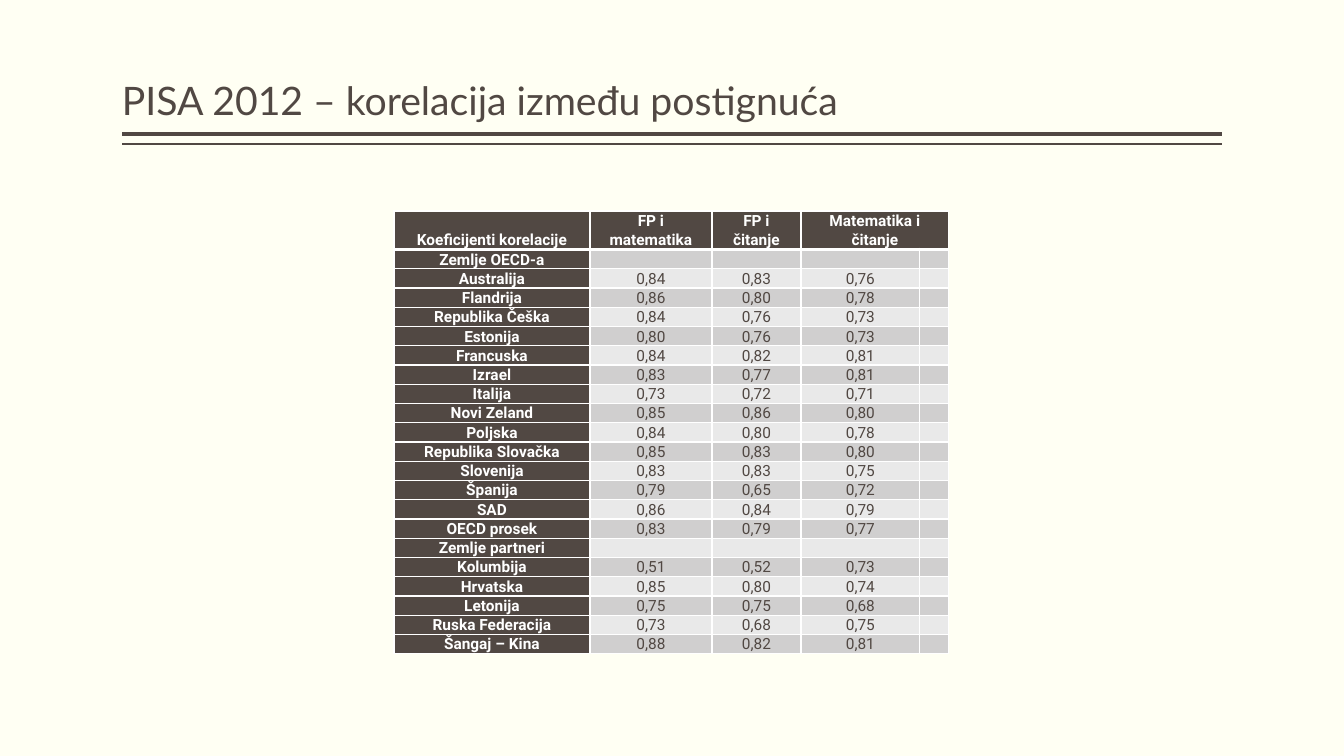
from lxml.etree import SubElement
from pptx import Presentation
from pptx.dml.color import RGBColor
from pptx.enum.shapes import MSO_CONNECTOR
from pptx.enum.text import MSO_ANCHOR, MSO_AUTO_SIZE, PP_ALIGN
from pptx.oxml.ns import qn
from pptx.util import Pt

TITLE = "PISA 2012 – korelacija između postignuća"
HEADER = ("Koeficijenti korelacije", "FP i matematika", "FP i čitanje", "Matematika i čitanje")
COUNTRIES = [
    ("Zemlje OECD-a",),
    ("Australija", "0,84", "0,83", "0,76"),
    ("Flandrija", "0,86", "0,80", "0,78"),
    ("Republika Češka", "0,84", "0,76", "0,73"),
    ("Estonija", "0,80", "0,76", "0,73"),
    ("Francuska", "0,84", "0,82", "0,81"),
    ("Izrael", "0,83", "0,77", "0,81"),
    ("Italija", "0,73", "0,72", "0,71"),
    ("Novi Zeland", "0,85", "0,86", "0,80"),
    ("Poljska", "0,84", "0,80", "0,78"),
    ("Republika Slovačka", "0,85", "0,83", "0,80"),
    ("Slovenija", "0,83", "0,83", "0,75"),
    ("Španija", "0,79", "0,65", "0,72"),
    ("SAD", "0,86", "0,84", "0,79"),
    ("OECD prosek", "0,83", "0,79", "0,77"),
    ("Zemlje partneri",),
    ("Kolumbija", "0,51", "0,52", "0,73"),
    ("Hrvatska", "0,85", "0,80", "0,74"),
    ("Letonija", "0,75", "0,75", "0,68"),
    ("Ruska Federacija", "0,73", "0,68", "0,75"),
    ("Šangaj – Kina", "0,88", "0,82", "0,81"),
]

BROWN = RGBColor(0x51, 0x48, 0x43)
WHITE = RGBColor(0xFF, 0xFF, 0xFF)
CREAM = RGBColor(0xFF, 0xFF, 0xF3)
BANDS = (RGBColor(0xE9, 0xE9, 0xE9), RGBColor(0xD0, 0xCF, 0xCF))

SLIDE_SIZE = (1344, 756)
LEFT, RIGHT = 122, 1222
TITLE_TOP, TITLE_HEIGHT = 8, 121
RULES = ((134, 3), (144, 1))
TABLE_LEFT, TABLE_TOP = 394, 211
COLUMNS = (196, 122, 89, 119, 29)
HEADER_HEIGHT, ROW_HEIGHT = 38, 19
CELL_MARGIN, TITLE_MARGIN = 7, 5


def px(length):
    """Turn px into EMU."""
    return round(length * 914400 / 100.8)


def style(para, font, size, color, bold, spacing):
    """Format a paragraph and its runs."""
    para.line_spacing = spacing
    for span in para.runs:
        span.font.name = font
        span.font.size = Pt(size)
        span.font.bold = bold
        span.font.color.rgb = color


def add_title(page):
    """Place the title and the double rule under it."""
    title = page.shapes.title
    title.left, title.top = px(LEFT), px(TITLE_TOP)
    title.width, title.height = px(RIGHT - LEFT), px(TITLE_HEIGHT)
    frame = title.text_frame
    frame.text = TITLE
    frame.word_wrap = True
    frame.auto_size = MSO_AUTO_SIZE.NONE
    frame.vertical_anchor = MSO_ANCHOR.BOTTOM
    frame.margin_left = frame.margin_right = 0
    frame.margin_top = frame.margin_bottom = px(TITLE_MARGIN)
    frame.paragraphs[0].alignment = PP_ALIGN.LEFT
    style(frame.paragraphs[0], "Lato", 28, BROWN, False, 0.9)
    for y, weight in RULES:
        rule = page.shapes.add_connector(MSO_CONNECTOR.STRAIGHT, px(RIGHT), px(y), px(LEFT), px(y))
        rule.line.color.rgb = BROWN
        rule.line.width = Pt(weight)
        SubElement(rule._element.spPr, qn("a:effectLst"))


def add_borders(cell, top, bottom):
    """Draw white borders around a cell, widths in points."""
    properties = cell._tc.get_or_add_tcPr()
    for side, weight in (("L", 1), ("R", 1), ("T", top), ("B", bottom)):
        border = SubElement(properties, qn(f"a:ln{side}"), w=str(Pt(weight)))
        fill = SubElement(border, qn("a:solidFill"))
        SubElement(fill, qn("a:srgbClr"), val=str(WHITE))


def fill_cell(cell, text, row, column):
    """Write and format one cell."""
    dark = row == 0 or column == 0
    add_borders(cell, 3 if row == 1 else 1, 3 if row == 0 else 1)
    cell.fill.solid()
    cell.fill.fore_color.rgb = BROWN if dark else BANDS[row % 2]
    cell.vertical_anchor = MSO_ANCHOR.BOTTOM
    cell.margin_left = cell.margin_right = px(CELL_MARGIN)
    cell.margin_top = cell.margin_bottom = 0
    cell.text_frame.text = text
    para = cell.text_frame.paragraphs[0]
    para.alignment = PP_ALIGN.CENTER
    style(para, "Roboto", 11, WHITE if dark else BROWN, dark, 1.07)
    if not text:
        SubElement(para._p, qn("a:endParaRPr"), sz="1100")


def add_correlations(page):
    """Build the table of correlation coefficients."""
    rows = [HEADER, *COUNTRIES]
    height = HEADER_HEIGHT + ROW_HEIGHT * len(COUNTRIES)
    frame = page.shapes.add_table(len(rows), len(COLUMNS), px(TABLE_LEFT), px(TABLE_TOP),
                                  px(sum(COLUMNS)), px(height))
    table = frame.table
    for column, width in zip(table.columns, COLUMNS):
        column.width = px(width)
    for index, texts in enumerate(rows):
        table.rows[index].height = px(ROW_HEIGHT if index else HEADER_HEIGHT)
        for column in range(len(COLUMNS)):
            text = texts[column] if column < len(texts) else ""
            fill_cell(table.cell(index, column), text, index, column)
    table.cell(0, 3).merge(table.cell(0, 4))


def main():
    """Make the deck and save it."""
    deck = Presentation()
    deck.slide_width, deck.slide_height = map(px, SLIDE_SIZE)
    page = deck.slides.add_slide(deck.slide_layouts.get_by_name("Title Only"))
    page.background.fill.solid()
    page.background.fill.fore_color.rgb = CREAM
    add_title(page)
    add_correlations(page)
    deck.save("out.pptx")


if __name__ == "__main__":
    main()
